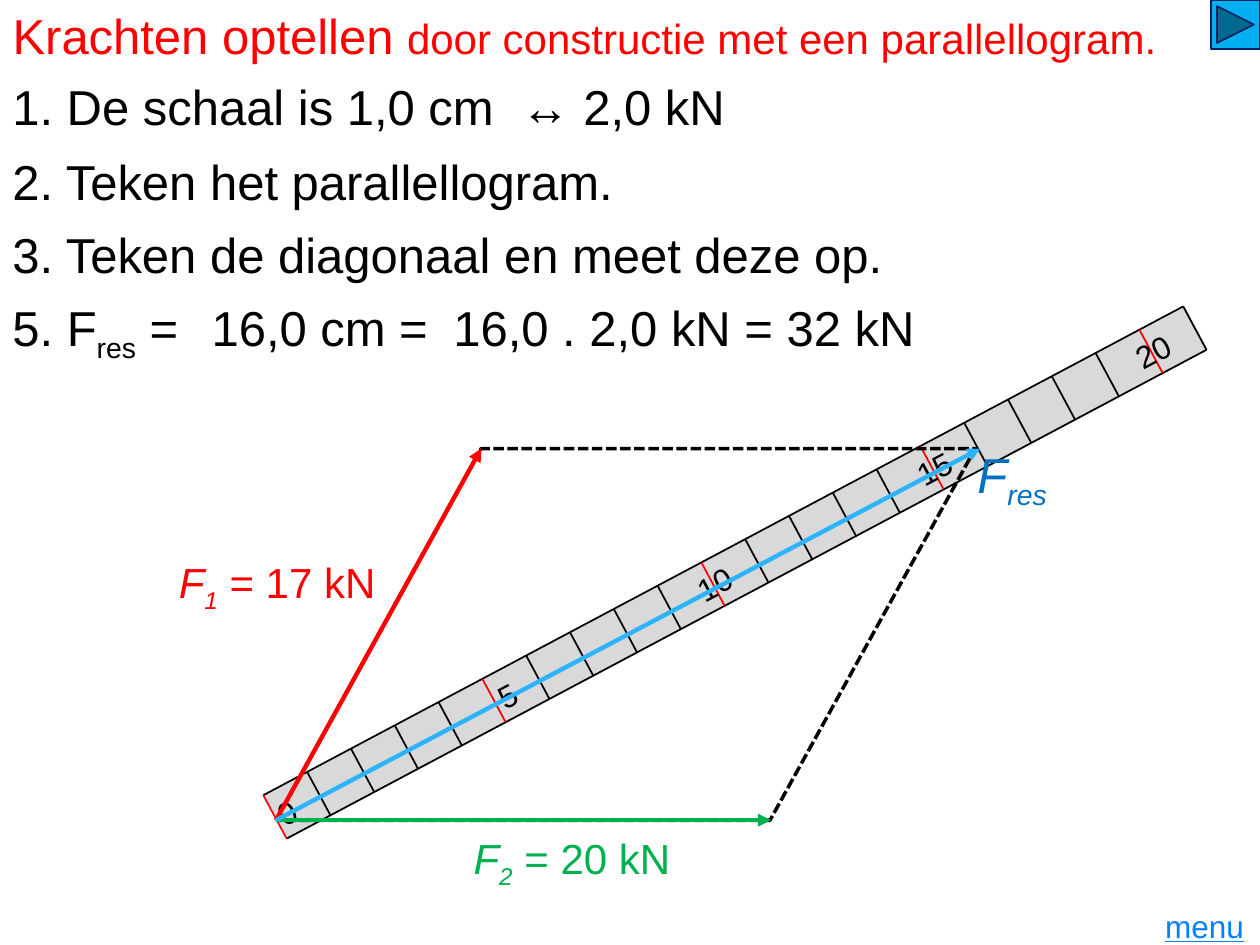
from lxml import etree
from pptx import Presentation
from pptx.dml.color import RGBColor
from pptx.enum import dml, shapes, text
from pptx.oxml import ns
from pptx.util import Pt

INK = {
    "black": "000000", "red": "FF0000", "green": "00B050",
    "blue": "0070C0", "sky": "2BB4FC", "link": "0080FF",
    "grey": "D9D9D9", "cyan": "00B0F0", "navy": "002060",
}
FONT = "Arial"
TILT = 332                      # rotation of the ruler
ZERO = (150.5, 454.4)           # upper corner of the ruler at 0
STEP = (25.03, -13.3)           # one unit along the ruler
SPAN = (13.3, 24.8)             # across the ruler
TAIL = (157.7, 468.7)           # common start of the forces
HANG = 66.25


def rgb(name):
    return RGBColor.from_string(INK[name])


def write(box, runs, size, ink, hang=0, align=text.PP_ALIGN.LEFT):
    """Fill one paragraph; run styles: i = italic, s = subscript."""
    para = box.text_frame.paragraphs[0]
    para.alignment = align
    if hang:
        props = para._p.get_or_add_pPr()
        props.set("marL", str(Pt(hang)))
        props.set("indent", str(-Pt(hang)))
    para.font.name, para.font.size = FONT, Pt(size)
    para.font.color.rgb = rgb(ink)
    for words, style in runs:
        run = para.add_run()
        run.text = words
        if "i" in style:
            run.font.italic = True
        if "s" in style:
            run._r.get_or_add_rPr().set("baseline", "-25000")
    return para


def label(pool, area, runs, size, ink, turn=0, **style):
    box = pool.add_textbox(*map(Pt, area))
    box.text_frame.word_wrap = True
    box.rotation = turn
    return box, write(box, runs, size, ink, **style)


def line(pool, start, end, ink, width=1, arrow=False):
    link = pool.add_connector(shapes.MSO_CONNECTOR.STRAIGHT,
                              *map(Pt, start + end))
    link.line.color.rgb = rgb(ink)
    link.line.width = Pt(width)
    if arrow:
        etree.SubElement(link.line._get_or_add_ln(), ns.qn("a:tailEnd"),
                         type="triangle")
    etree.SubElement(link._element.spPr, ns.qn("a:effectLst"))


def form(pool, kind, area, fill=None, edge=None, width=1):
    item = pool.add_shape(kind, *map(Pt, area))
    item.shadow.inherit = False
    if fill:
        item.fill.solid()
        item.fill.fore_color.rgb = rgb(fill)
    else:
        item.fill.background()
    if edge:
        item.line.color.rgb = rgb(edge)
        item.line.width = Pt(width)
    else:
        item.line.fill.background()
    return item


def ruler(slide):
    pool = slide.shapes.add_group_shape().shapes
    body = form(pool, shapes.MSO_SHAPE.RECTANGLE,
                (123.1, 313.2, 595.4, 28.1), "grey")
    body.rotation = TILT

    def spot(unit, side):
        return tuple(z + unit * a + side * b
                     for z, a, b in zip(ZERO, STEP, SPAN))

    for side in (0, 1):
        line(pool, spot(0, side), spot(21, side), "black")
    for unit in range(22):
        ink = "black" if unit % 5 else "red"
        line(pool, spot(unit, 0), spot(unit, 1), ink)
    # Numbers at every fifth mark
    marks = [(151.9, 450, 23.8), (277.9, 383, 23.8), (389.5, 312.5, 62.6),
             (515.5, 248.4, 54.7), (641.5, 185.8, 37.4)]
    for rank, (left, top, wide) in enumerate(marks):
        label(pool, (left, top, wide, 28.8), [(str(rank * 5), "")],
              18, "black", TILT)


def heading(slide):
    title = slide.shapes.title
    title.left, title.top, title.width, title.height = map(
        Pt, (0, -0.7, 720, 41))
    frame = title.text_frame
    frame.vertical_anchor = text.MSO_ANCHOR.TOP
    frame.auto_size = text.MSO_AUTO_SIZE.NONE
    para = write(title, [("Krachten optellen ", ""),
                         ("door constructie met een parallellogram.", "")],
                 28, "red")
    para.runs[1].font.size = Pt(24)


def steps(slide):
    rows = [
        (0, 40.3, 726, [("1. De schaal is 1,0 cm  ↔ 2,0 kN", "")]),
        (0, 82.8, 726, [("2. Teken het parallellogram.", "")]),
        (0, 124.6, 726, [("3. Teken de diagonaal en meet deze op.", "")]),
        (0, 166.3, 295, [("5. F", ""), ("res", "s"), (" =", "")]),
        (113.8, 166.3, 147.6, [("16,0 cm =", "")]),
        (252, 166.3, 309, [("16,0 . 2,0 kN = 32 kN", "")]),
    ]
    for left, top, wide, runs in rows:
        label(slide.shapes, (left, top, wide, 41.5), runs, 28, "black",
              hang=HANG)


def forces(slide):
    # Dashed parallelogram
    frame = form(slide.shapes, shapes.MSO_SHAPE.PARALLELOGRAM,
                 (157.7, 256.3, 399.6, 212.4), edge="black", width=2)
    frame.adjustments[0] = 0.552
    frame.line.dash_style = dml.MSO_LINE.SQUARE_DOT

    # Arrow tip and label of each force
    left, right = text.PP_ALIGN.LEFT, text.PP_ALIGN.RIGHT
    rows = [
        ((275, 256.3), "red", "red", (65.5, 314.6, 156.2, 36), 24, right,
         [("F", "i"), ("1", "is"), (" = 17 kN", "")]),
        ((440.6, 468.7), "green", "green", (263.5, 472.3, 170, 36), 24, left,
         [("F", "i"), ("2", "is"), (" = 20 kN", "")]),
        ((560.2, 256.3), "sky", "blue", (551.5, 250.6, 69.8, 41), 28, left,
         [("F", "i"), ("res", "is")]),
    ]
    for tip, stroke, ink, area, size, align, runs in rows:
        pool = slide.shapes.add_group_shape().shapes
        label(pool, area, runs, size, ink, align=align)
        line(pool, TAIL, tip, stroke, 2.5, True)


def controls(slide):
    form(slide.shapes, shapes.MSO_SHAPE.ACTION_BUTTON_FORWARD_OR_NEXT,
         (691.9, 0, 28.1, 28.1), "cyan", "navy")
    box, para = label(slide.shapes, (650.2, 517.7, 67.7, 22.3),
                      [("menu", "")], 18, "link", align=text.PP_ALIGN.RIGHT)
    box.text_frame.vertical_anchor = text.MSO_ANCHOR.MIDDLE
    para.font.underline = True


def main():
    deck = Presentation()
    deck.slide_width, deck.slide_height = Pt(720), Pt(540)
    slide = deck.slides.add_slide(deck.slide_layouts[5])
    ruler(slide)
    heading(slide)
    steps(slide)
    controls(slide)
    forces(slide)
    deck.save("out.pptx")


if __name__ == "__main__":
    main()
